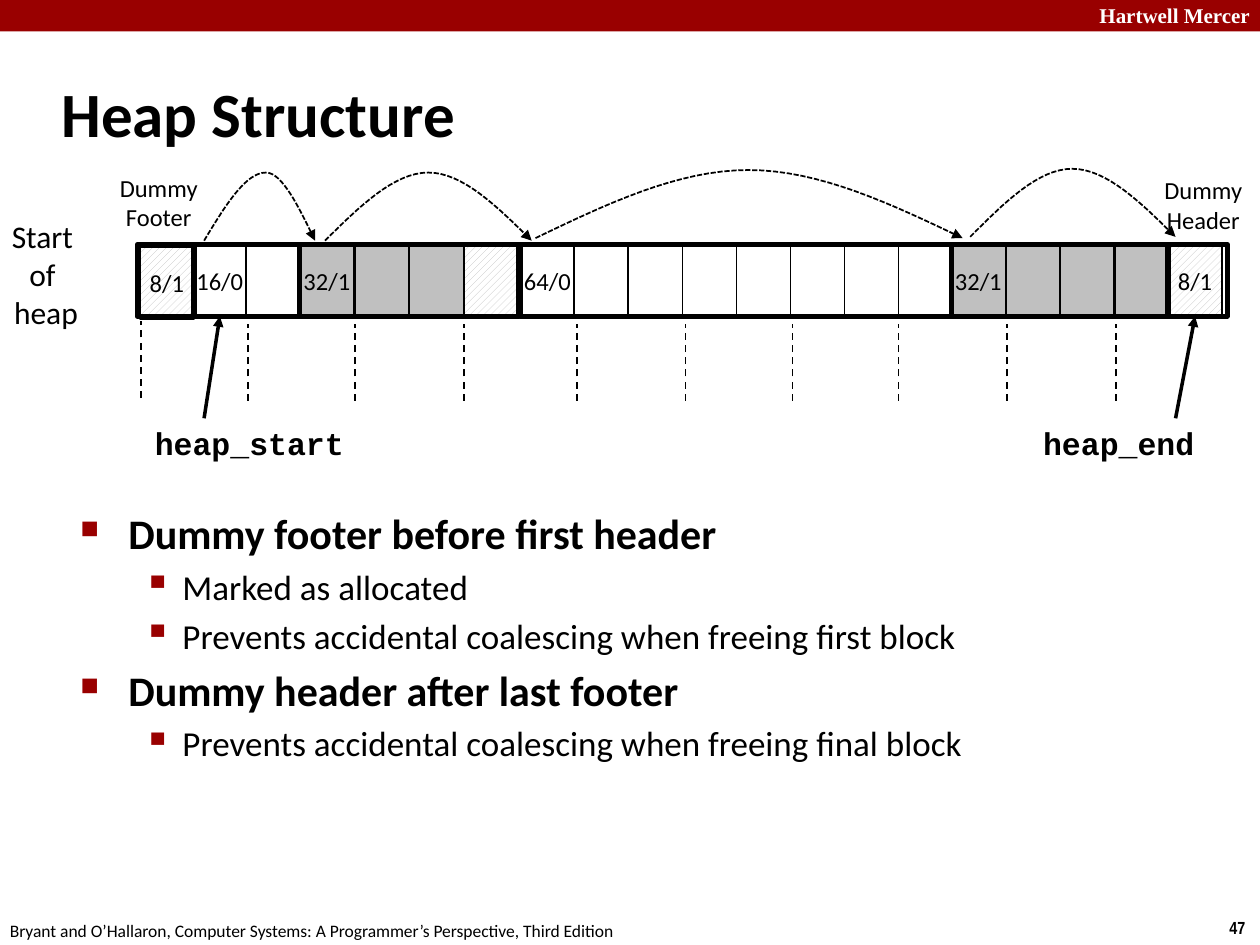
from lxml import etree
from pptx import Presentation
from pptx.dml.color import RGBColor
from pptx.enum.dml import MSO_LINE, MSO_PATTERN
from pptx.enum.shapes import MSO_CONNECTOR, MSO_SHAPE
from pptx.enum.text import MSO_ANCHOR, PP_ALIGN
from pptx.oxml.ns import qn
from pptx.util import Inches, Pt

BLACK = RGBColor(0x00, 0x00, 0x00)
WHITE = RGBColor(0xFF, 0xFF, 0xFF)
GRAY = RGBColor(0xC0, 0xC0, 0xC0)
RED = RGBColor(0x99, 0x00, 0x00)
HATCH = MSO_PATTERN.WIDE_UPWARD_DIAGONAL
DASH, SHORT_DASH = MSO_LINE.DASH, MSO_LINE.SQUARE_DOT
RECTANGLE, STRAIGHT = MSO_SHAPE.RECTANGLE, MSO_CONNECTOR.STRAIGHT
LEFT, CENTER, RIGHT = PP_ALIGN.LEFT, PP_ALIGN.CENTER, PP_ALIGN.RIGHT
TOP, MIDDLE = MSO_ANCHOR.TOP, MSO_ANCHOR.MIDDLE
BOTTOM_SITE = 2

CELL_WIDTH = 0.43
# Heap blocks: left, width, label, cell fills, inset of the cells
BLOCKS = [
    (1.53, 0.85, "16/0", [WHITE] * 2, 0),
    (2.38, 1.74, "32/1", [GRAY] * 3 + [HATCH], 0),
    (4.13, 3.43, "64/0", [WHITE] * 8, 0),
    (7.55, 1.73, "32/1", [GRAY] * 4, 0),
    (9.27, 0.47, "8/1", [HATCH], 0),
    (1.09, 0.45, "8/1", [HATCH], 0.02),
]
# Arcs between headers: start, apex, end, baseline
ARCS = [
    (1.62, 2.11, 2.5, 1.91),
    (2.58, 3.4, 4.22, 1.91),
    (4.25, 5.94, 7.64, 1.89),
    (7.7, 8.51, 9.33, 1.88),
]
BOUNDARIES = [1.97, 2.82, 3.68, 4.58, 5.44, 6.29, 7.13, 7.99, 8.86]
BULLETS = [
    (0, "Dummy footer before first header"),
    (1, "Marked as allocated"),
    (1, "Prevents accidental coalescing when freeing first block"),
    (0, "Dummy header after last footer"),
    (1, "Prevents accidental coalescing when freeing final block"),
]
# Bullet levels: text size, bold, left margin, hanging indent, mark, mark size in %
LEVELS = [(24, True, 0.38, 0.38, "■", 60), (20, False, 0.81, 0.31, "▪", 110)]


def write_text(shape, text, size=14, font="Calibri", color=BLACK, bold=False,
               align=LEFT, anchor=TOP, wrap=False):
    """Write one paragraph for each line of text."""
    frame = shape.text_frame
    frame.word_wrap = wrap
    frame.vertical_anchor = anchor
    for index, line in enumerate(text.split("\n")):
        paragraph = frame.add_paragraph() if index else frame.paragraphs[0]
        paragraph.alignment = align
        run = paragraph.add_run()
        run.text = line
        run.font.size, run.font.bold, run.font.name = Pt(size), bold, font
        run.font.color.rgb = color


def add_text(slide, box, text, **text_format):
    shape = slide.shapes.add_textbox(*map(Inches, box))
    write_text(shape, text, **text_format)
    return shape


def style_line(shape, width, dash=None, arrow=False):
    shape.line.color.rgb = BLACK
    shape.line.width = Pt(width)
    if dash:
        shape.line.dash_style = dash
    if arrow:
        line = shape.element.spPr.find(qn("a:ln"))
        etree.SubElement(line, qn("a:tailEnd"), type="triangle")


def add_rectangle(slide, box, fill=None, line_width=0):
    shape = slide.shapes.add_shape(RECTANGLE, *map(Inches, box))
    shape.shadow.inherit = False
    if fill is None:
        shape.fill.background()
    elif fill == HATCH:
        shape.fill.patterned()
        shape.fill.pattern = HATCH
        shape.fill.fore_color.rgb, shape.fill.back_color.rgb = GRAY, WHITE
    else:
        shape.fill.solid()
        shape.fill.fore_color.rgb = fill
    if line_width:
        style_line(shape, line_width)
    else:
        shape.line.fill.background()
    return shape


def add_line(slide, start, end, width, **line_format):
    connector = slide.shapes.add_connector(STRAIGHT, *map(Inches, start + end))
    style_line(connector, width, **line_format)
    etree.SubElement(connector.element.spPr, qn("a:effectLst"))
    return connector


def add_arc(slide, start, apex, end, baseline, height=0.54, steps=16):
    """Draw a dashed hop that rises to the apex and falls to the end."""
    def rise(t):
        return baseline - height * (1.5 * t - 0.5 * t ** 3)

    parts = [i / steps for i in range(steps + 1)]
    points = [(start + (apex - start) * t, rise(t)) for t in parts]
    points += [(end + (apex - end) * t, rise(t)) for t in reversed(parts[:-1])]
    points = [(Inches(x), Inches(y)) for x, y in points]
    builder = slide.shapes.build_freeform(*points[0])
    builder.add_line_segments(points[1:], close=False)
    shape = builder.convert_to_shape()
    shape.shadow.inherit = False
    shape.fill.background()
    style_line(shape, 1, SHORT_DASH, arrow=True)


def add_block(slide, box, label, fills, inset):
    """Draw the cells of one heap block and its outline; return the header cell."""
    left, top, width, height = box
    pitch = width / len(fills)
    cells = [
        add_rectangle(slide, (left + inset + i * pitch, top + inset, CELL_WIDTH, height), fill, 1)
        for i, fill in enumerate(fills)
    ]
    write_text(cells[0], label, align=CENTER, anchor=MIDDLE)
    add_rectangle(slide, box, line_width=3)
    return cells[0]


def add_heap(slide, top, height):
    headers = [
        add_block(slide, (left, top, width, height), label, fills, inset)
        for left, width, label, fills, inset in BLOCKS
    ]
    for arc in ARCS:
        add_arc(slide, *arc)

    # Alignment boundaries
    add_line(slide, (1.12, 3.16), (1.12, 2.55), 1, dash=DASH)
    for x in BOUNDARIES:
        add_line(slide, (x, 3.18), (x, 2.57), 1, dash=DASH)

    # Captions
    for box, text, size in [((-0.01, 1.67, 0.75, 1.01), "Start \nof \nheap", 18),
                            ((0.85, 1.32, 0.82, 0.57), "Dummy\nFooter", 14),
                            ((9.14, 1.34, 0.82, 0.57), "Dummy\nHeader", 14)]:
        add_text(slide, box, text, size=size, align=CENTER, anchor=MIDDLE)

    # Pointers to the first and last headers
    for header, x, box, name in [(headers[0], 1.62, (1.13, 3.32, 1.71, 0.4), "heap_start"),
                                 (headers[4], 9.33, (8.18, 3.32, 1.41, 0.4), "heap_end")]:
        pointer = add_line(slide, (x, 3.32), (x + 0.13, top + height), 2, arrow=True)
        pointer.end_connect(header, BOTTOM_SITE)
        add_text(slide, box, name, size=18, font="Courier New", bold=True)


def add_bullets(slide, box):
    shape = slide.shapes.add_textbox(*map(Inches, box))
    write_text(shape, "\n".join(text for _, text in BULLETS), wrap=True)
    for paragraph, (level, _) in zip(shape.text_frame.paragraphs, BULLETS):
        size, bold, margin, hanging, mark, mark_size = LEVELS[level]
        paragraph.level = level
        paragraph.space_before = Pt(size * 0.2)
        font = paragraph.runs[0].font
        font.size, font.bold = Pt(size), bold
        properties = paragraph._p.get_or_add_pPr()
        properties.set("marL", str(Inches(margin)))
        properties.set("indent", str(-Inches(hanging)))
        color = etree.SubElement(properties, qn("a:buClr"))
        etree.SubElement(color, qn("a:srgbClr"), val=str(RED))
        etree.SubElement(properties, qn("a:buSzPct"), val=str(mark_size * 1000))
        etree.SubElement(properties, qn("a:buChar"), char=mark)


def add_frame(slide, width):
    """Draw the top band, the title and the footer."""
    add_rectangle(slide, (0, 0, width, 0.25), RED)
    add_text(slide, (8.59, -0.03, 1.43, 0.3), "Hartwell Mercer", size=12,
             font="Times New Roman", color=WHITE, bold=True, align=RIGHT)
    add_text(slide, (0.39, 0.48, 8.3, 0.83), "Heap Structure", size=36, bold=True,
             anchor=MIDDLE, wrap=True)
    add_text(slide, (-0.02, 7.25, 5.08, 0.27),
             "Bryant and O’Hallaron, Computer Systems: A Programmer’s Perspective, Third Edition",
             size=10)
    add_text(slide, (9.66, 7.23, 0.34, 0.27), "47", size=10, font="Arial Narrow", bold=True)


def main():
    presentation = Presentation()
    presentation.slide_width, presentation.slide_height = Inches(10), Inches(7.5)
    slide = presentation.slides.add_slide(presentation.slide_layouts[6])
    add_frame(slide, 10)
    add_heap(slide, 1.94, 0.57)
    add_bullets(slide, (0.54, 3.98, 8.64, 1.84))
    presentation.save("out.pptx")


if __name__ == "__main__":
    main()
